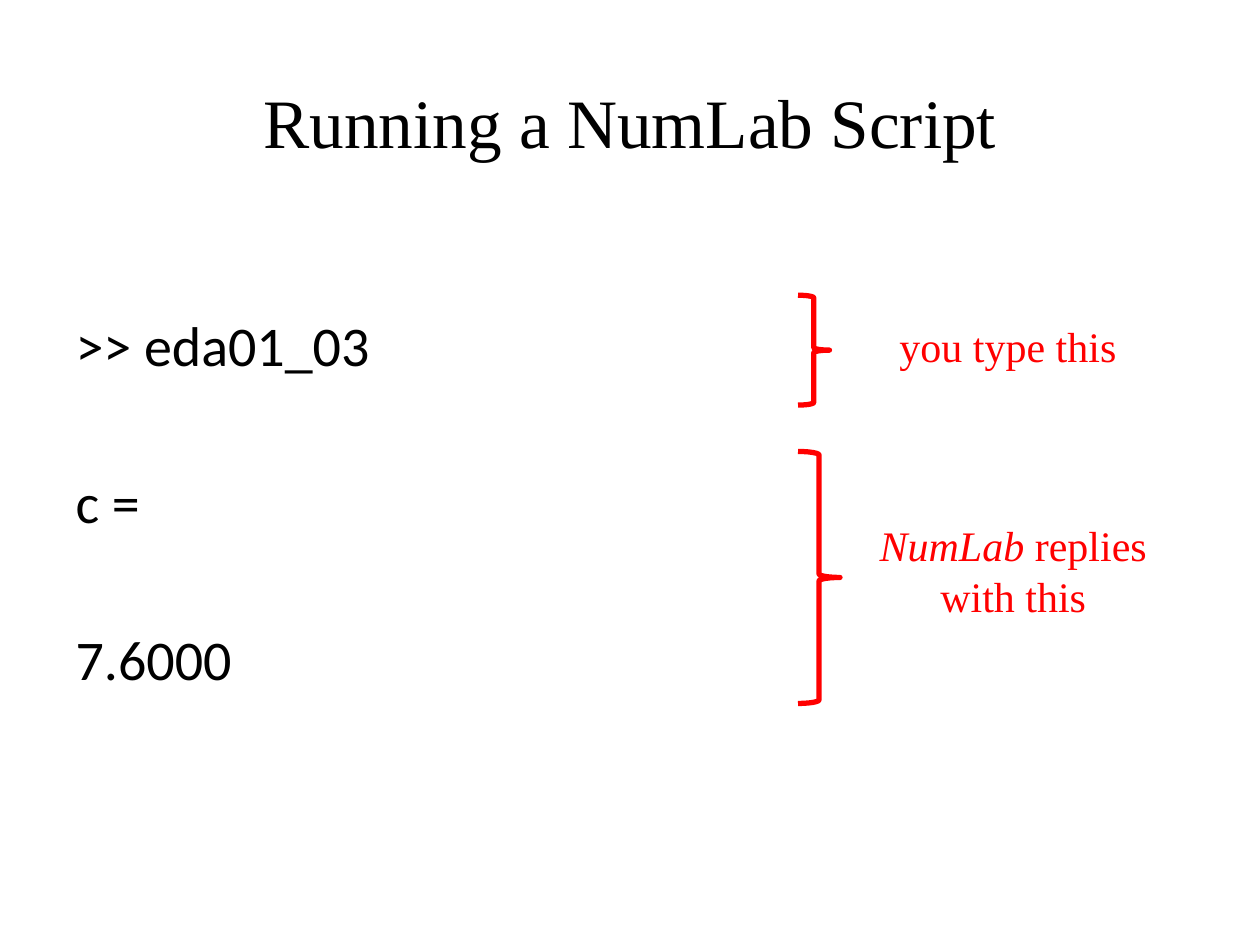
"""Builds a slide that explains how a NumLab script is run."""
from dataclasses import dataclass

from lxml.etree import SubElement
from pptx import Presentation
from pptx.dml.color import RGBColor
from pptx.enum.shapes import MSO_SHAPE
from pptx.enum.text import MSO_ANCHOR, MSO_AUTO_SIZE, PP_ALIGN
from pptx.oxml.ns import qn
from pptx.util import Pt


@dataclass(frozen=True)
class Theme:
    """Fonts, colours and sizes of the slide."""
    prose_font: str = "Times New Roman"
    code_font: str = "Calibri"
    ink: RGBColor = RGBColor(0, 0, 0)
    accent: RGBColor = RGBColor(255, 0, 0)
    title_size: float = 39.6
    code_size: float = 32
    note_size: float = 24
    brace_weight: float = 3
    code_gap: float = 51.2
    code_indent: float = 27


def add_text(paragraph, text, *, font, size, color, italic=False):
    """Append a formatted run to a paragraph."""
    run = paragraph.add_run()
    run.text = text
    run.font.name = font
    run.font.size = Pt(size)
    run.font.color.rgb = color
    run.font.italic = italic


class SlideBuilder:
    """Holds the theme and the current slide."""

    def __init__(self, slide, theme):
        """Keep the slide and its theme."""
        self.slide = slide
        self.theme = theme

    def place(self, holder, left, top, width, height, anchor):
        """Move a text holder and return its text frame."""
        holder.left, holder.top = Pt(left), Pt(top)
        holder.width, holder.height = Pt(width), Pt(height)
        frame = holder.text_frame
        frame.word_wrap = True
        frame.auto_size = MSO_AUTO_SIZE.NONE
        frame.vertical_anchor = anchor
        return frame

    def title(self, text, *bounds):
        """Fill the title placeholder."""
        frame = self.place(self.slide.shapes.title, *bounds, MSO_ANCHOR.MIDDLE)
        heading = frame.paragraphs[0]
        heading.alignment = PP_ALIGN.CENTER
        add_text(heading, text, font=self.theme.prose_font,
                 size=self.theme.title_size, color=self.theme.ink)

    def code(self, lines, *bounds):
        """Fill the body placeholder with widely spaced lines of code."""
        theme = self.theme
        frame = self.place(self.slide.placeholders[1], *bounds, MSO_ANCHOR.TOP)
        for index, line in enumerate(lines):
            row = frame.add_paragraph() if index else frame.paragraphs[0]
            row.space_before = Pt(theme.code_gap if index else 0)
            add_text(row, line, font=theme.code_font,
                     size=theme.code_size, color=theme.ink)
            properties = row._p.get_or_add_pPr()
            properties.set("marL", str(Pt(theme.code_indent)))
            properties.set("indent", str(-Pt(theme.code_indent)))
            SubElement(properties, qn("a:buNone"))

    def brace(self, left, top, width, height):
        """Draw a right brace beside the code."""
        brace = self.slide.shapes.add_shape(
            MSO_SHAPE.RIGHT_BRACE, Pt(left), Pt(top), Pt(width), Pt(height))
        brace.shadow.inherit = False
        brace.fill.background()
        brace.line.color.rgb = self.theme.accent
        brace.line.width = Pt(self.theme.brace_weight)

    def note(self, text, *bounds, emphasis=""):
        """Write a centred note, optionally led by italic words."""
        box = self.slide.shapes.add_textbox(0, 0, 0, 0)
        remark = self.place(box, *bounds, MSO_ANCHOR.MIDDLE).paragraphs[0]
        remark.alignment = PP_ALIGN.CENTER
        for words, italic in ((emphasis, True), (text, False)):
            if words:
                add_text(remark, words, font=self.theme.prose_font,
                         size=self.theme.note_size, color=self.theme.accent,
                         italic=italic)


def main():
    """Build and save the slide."""
    deck = Presentation()
    deck.slide_width, deck.slide_height = Pt(720), Pt(540)
    slide = deck.slides.add_slide(deck.slide_layouts[1])
    builder = SlideBuilder(slide, Theme())
    builder.code((">> eda01_03", "c =", "7.6000"), 36, 173.8, 648, 246)
    builder.title("Running a NumLab Script", 36, 42, 648, 54)
    builder.brace(456, 168.7, 18, 62.8)
    builder.note("you type this", 486, 179.5, 180, 36)
    builder.note(" replies with this", 492, 307.8, 174, 36, emphasis="NumLab")
    builder.brace(456, 258, 24, 144)
    deck.save("out.pptx")


if __name__ == "__main__":
    main()
